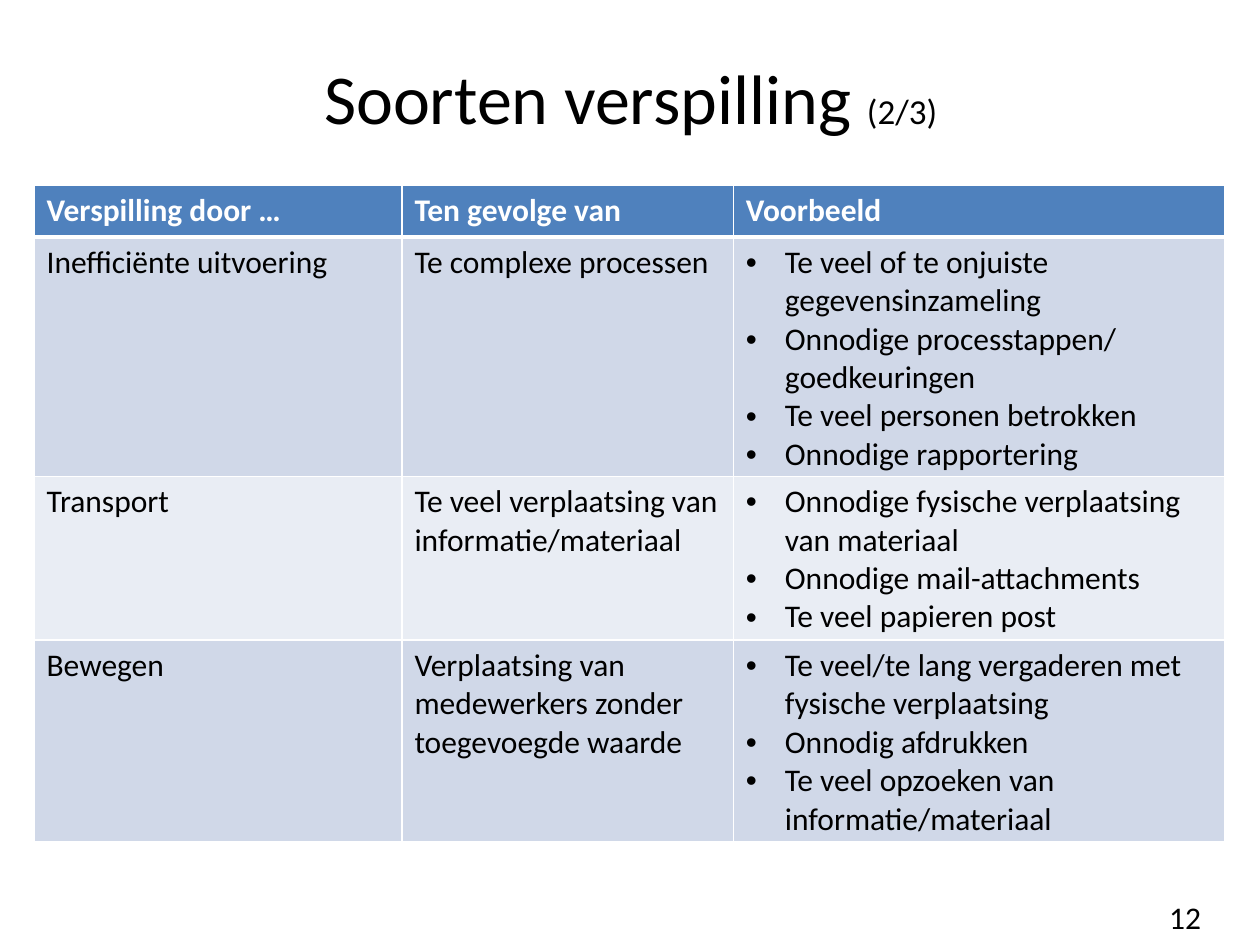
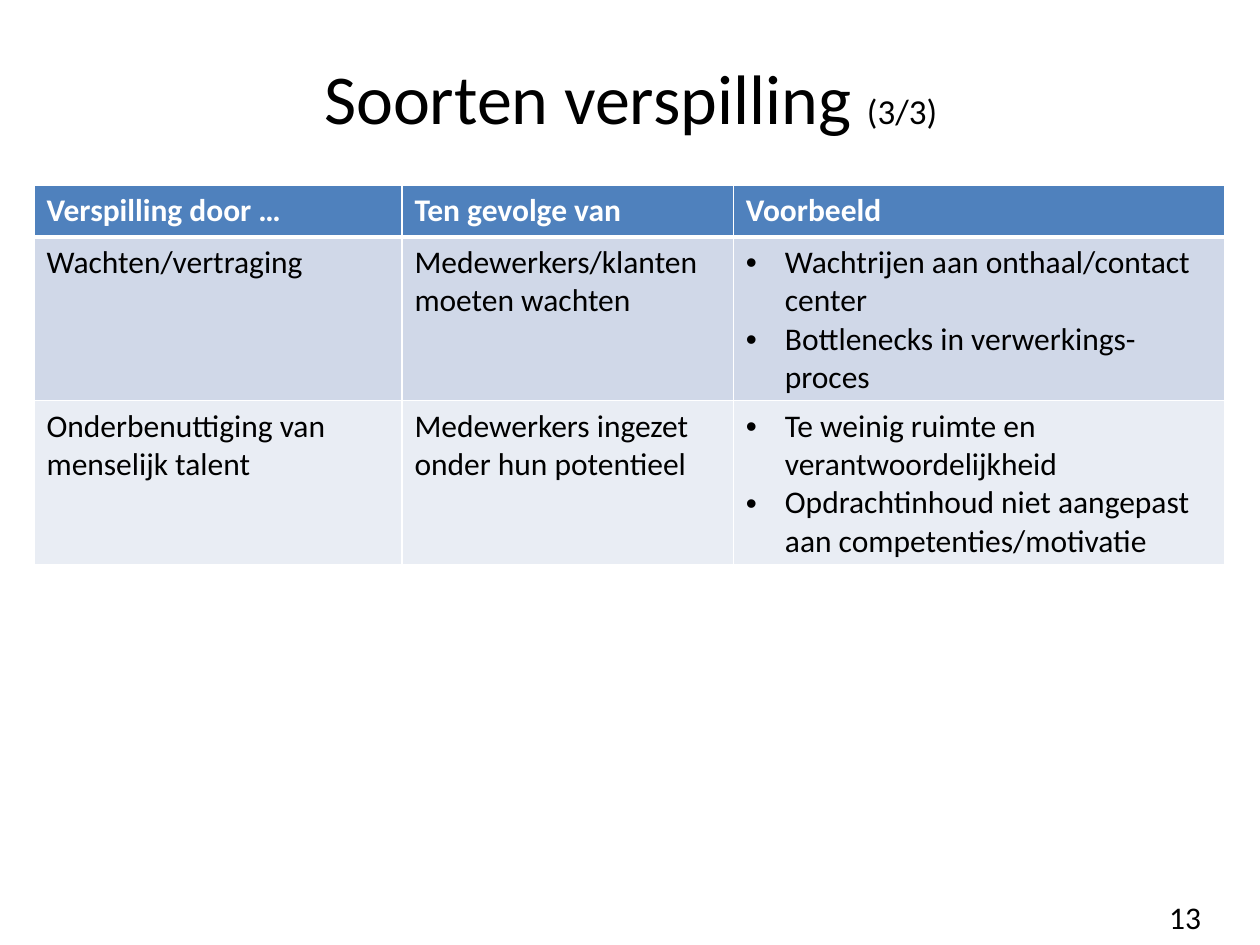
from dataclasses import dataclass

from lxml.etree import SubElement
from pptx import Presentation
from pptx.dml.color import RGBColor
from pptx.enum.text import MSO_ANCHOR, PP_ALIGN
from pptx.oxml import parse_xml
from pptx.oxml.ns import nsdecls, qn
from pptx.util import Inches, Pt

TITLE = "Soorten verspilling "
HEADERS = ("Verspilling door …", "Ten gevolge van", "Voorbeeld")
SLIDES = [
    {
        "part": "(2/3)",
        "number": "12",
        "rows": [
            ("Inefficiënte uitvoering", "Te complexe processen", [
                "Te veel of te onjuiste gegevensinzameling",
                "Onnodige processtappen/ goedkeuringen",
                "Te veel personen betrokken",
                "Onnodige rapportering",
            ]),
            ("Transport", "Te veel verplaatsing van informatie/materiaal", [
                "Onnodige fysische verplaatsing van materiaal",
                "Onnodige mail-attachments",
                "Te veel papieren post",
            ]),
            ("Bewegen", "Verplaatsing van medewerkers zonder toegevoegde waarde", [
                "Te veel/te lang vergaderen met fysische verplaatsing",
                "Onnodig afdrukken",
                "Te veel opzoeken van informatie/materiaal",
            ]),
        ],
    },
    {
        "part": "(3/3)",
        "number": "13",
        "rows": [
            ("Wachten/vertraging", "Medewerkers/klanten moeten wachten", [
                "Wachtrijen aan onthaal/contact center",
                "Bottlenecks in verwerkings-proces",
            ]),
            ("Onderbenuttiging van menselijk talent", "Medewerkers ingezet onder hun potentieel", [
                "Te weinig ruimte en verantwoordelijkheid",
                "Opdrachtinhoud niet aangepast aan competenties/motivatie",
            ]),
        ],
    },
]


@dataclass(frozen=True)
class Theme:
    font: str = "Calibri"
    text: str = "000000"
    white: str = "FFFFFF"
    header: str = "4F81BD"
    bands: tuple = ("D0D8E8", "E9EDF4")
    title_size: int = 40
    part_size: int = 20
    body_size: int = 18
    thin: int = 1
    thick: int = 3


THEME = Theme()
TITLE_BOX = (0.28, 0.14, 9.45, 1.25)
NUMBER_BOX = (9.18, 7.08, 0.82, 0.29)
TABLE_LEFT, TABLE_TOP = 0.27, 1.47
COLUMN_WIDTHS = (2.92, 2.63, 3.9)
ROW_HEIGHT = 0.41
BULLET_INDENT = 0.31


def add_run(paragraph, text, size, color=THEME.text, bold=False):
    run = paragraph.add_run()
    run.text = text
    formats = {"name": THEME.font, "size": Pt(size), "bold": bold}
    for name, value in formats.items():
        setattr(run.font, name, value)
    run.font.color.rgb = RGBColor.from_string(color)


def add_text_box(slide, box, runs, alignment, anchor):
    frame = slide.shapes.add_textbox(*map(Inches, box)).text_frame
    formats = {"word_wrap": True, "vertical_anchor": anchor}
    for name, value in formats.items():
        setattr(frame, name, value)
    paragraph = frame.paragraphs[0]
    paragraph.alignment = alignment
    for text, size in runs:
        add_run(paragraph, text, size)


def add_bullet(paragraph):
    properties = paragraph._p.get_or_add_pPr()
    indent = Inches(BULLET_INDENT)
    properties.set("marL", str(indent))
    properties.set("indent", str(-indent))
    SubElement(properties, qn("a:buFont"), typeface="Arial")
    SubElement(properties, qn("a:buChar"), char="•")


def set_borders(cell, top, bottom):
    properties = cell._tc.get_or_add_tcPr()
    widths = {"lnL": THEME.thin, "lnR": THEME.thin, "lnT": top, "lnB": bottom}
    for position, (side, width) in enumerate(widths.items()):
        properties.insert(position, parse_xml(
            f'<a:{side} {nsdecls("a")} w="{Pt(width)}"><a:solidFill>'
            f'<a:srgbClr val="{THEME.white}"/></a:solidFill></a:{side}>'
        ))


def fill_cell(cell, content, row):
    is_header = row == 0
    cell.fill.solid()
    fill = THEME.header if is_header else THEME.bands[(row - 1) % 2]
    cell.fill.fore_color.rgb = RGBColor.from_string(fill)
    set_borders(cell, THEME.thick if row == 1 else THEME.thin,
                THEME.thick if is_header else THEME.thin)
    is_list = isinstance(content, list)
    frame = cell.text_frame
    for index, text in enumerate(content if is_list else [content]):
        paragraph = frame.add_paragraph() if index else frame.paragraphs[0]
        if is_list:
            add_bullet(paragraph)
        add_run(paragraph, text, THEME.body_size,
                THEME.white if is_header else THEME.text, is_header)


def add_waste_table(slide, rows):
    contents = [HEADERS, *rows]
    box = (TABLE_LEFT, TABLE_TOP, sum(COLUMN_WIDTHS), ROW_HEIGHT * len(contents))
    table = slide.shapes.add_table(
        len(contents), len(HEADERS), *map(Inches, box)).table
    for column, width in zip(table.columns, COLUMN_WIDTHS):
        column.width = Inches(width)
    for row, values in enumerate(contents):
        table.rows[row].height = Inches(ROW_HEIGHT)
        for column, content in enumerate(values):
            fill_cell(table.cell(row, column), content, row)


def main():
    presentation = Presentation()
    presentation.slide_width = Inches(10)
    presentation.slide_height = Inches(7.5)
    for content in SLIDES:
        slide = presentation.slides.add_slide(presentation.slide_layouts[6])
        title_runs = [(TITLE, THEME.title_size), (content["part"], THEME.part_size)]
        add_text_box(slide, TITLE_BOX, title_runs, PP_ALIGN.CENTER, MSO_ANCHOR.MIDDLE)
        add_waste_table(slide, content["rows"])
        number_runs = [(content["number"], THEME.body_size)]
        add_text_box(slide, NUMBER_BOX, number_runs, PP_ALIGN.LEFT, MSO_ANCHOR.TOP)
    presentation.save("out.pptx")


if __name__ == "__main__":
    main()
